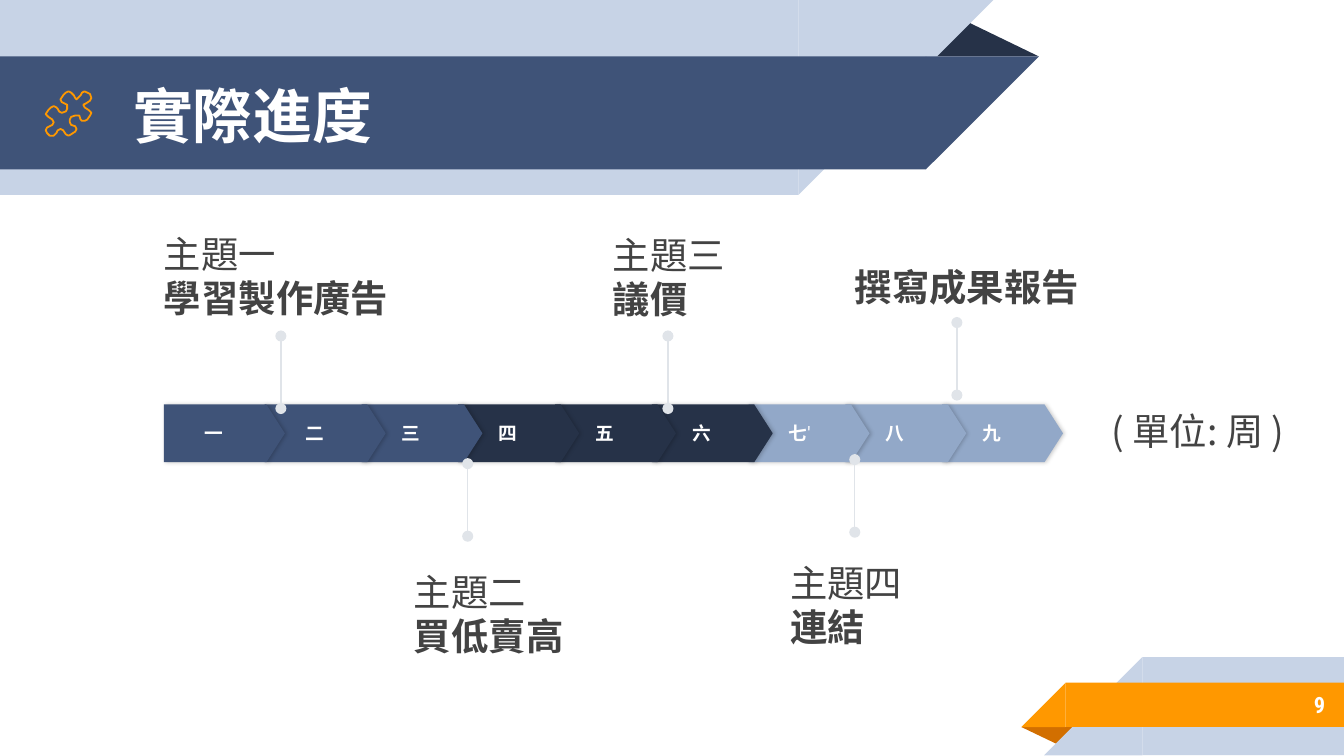
import pptx
import pptx.util
import pptx.dml.color
import pptx.enum.shapes
import pptx.enum.text
import pptx.oxml
import pptx.oxml.ns

Inches = pptx.util.Inches
Pt = pptx.util.Pt
Kind = pptx.enum.shapes.MSO_SHAPE
Anchor = pptx.enum.text.MSO_ANCHOR
Align = pptx.enum.text.PP_ALIGN
qn = pptx.oxml.ns.qn

COLORS = {
    "pale": "C7D3E6", "blue": "3F5378", "navy": "263248", "steel": "92A8C8",
    "orange": "FF9800", "rust": "D26F00", "line": "E0E4E9",
    "text": "434343", "white": "FFFFFF",
}
CJK = "Noto Sans CJK SC"
LATIN = "Roboto Condensed"

PUZZLE = [
    (30, 9), (33, 7), (34, 5), (33, 2), (31, 1), (29, 0), (27, 1), (26, 3),
    (25, 4), (24, 5), (23, 6), (22, 5), (21, 3), (19, 1), (17, 0), (15, 1),
    (13, 3), (11, 6), (12, 8), (14, 9), (16, 10), (16, 13), (15, 15),
    (12, 16), (10, 15), (9, 13), (8, 12), (6, 11), (4, 12), (2, 14), (0, 17),
    (2, 19), (5, 21), (6, 23), (5, 25), (3, 26), (1, 27), (0, 29), (1, 31),
    (3, 33), (6, 33), (8, 31), (9, 29), (11, 28), (13, 29), (15, 32),
    (17, 33), (19, 32), (22, 30), (23, 28), (22, 26), (19, 25), (18, 23),
    (18, 21), (19, 19), (22, 18), (25, 18), (26, 21), (27, 22), (29, 22),
    (31, 21), (33, 18), (34, 16), (32, 14), (29, 12), (28, 10),
]


def rgb(name):
    return pptx.dml.color.RGBColor.from_string(COLORS[name])


def style(run, size, color, bold=False, face=CJK):
    font = run.font
    font.size, font.bold, font.name = Pt(size), bold, face
    font.color.rgb = rgb(color)
    east = pptx.oxml.parse_xml(
        f'<a:ea {pptx.oxml.ns.nsdecls("a")} typeface="{face}"/>')
    run._r.get_or_add_rPr().find(qn("a:latin")).addnext(east)


def frame(shape, anchor, inset=(0, 0, 0, 0)):
    text = shape.text_frame
    text.word_wrap = True
    text.auto_size = pptx.enum.text.MSO_AUTO_SIZE.NONE
    text.vertical_anchor = anchor
    text.margin_left, text.margin_top, text.margin_right, text.margin_bottom = (
        Inches(side) for side in inset)
    return text


def block(slide, kind, box, color, flip=False, turn=0):
    shape = slide.shapes.add_shape(kind, *map(Inches, box))
    shape.shadow.inherit = False
    shape.fill.solid()
    shape.fill.fore_color.rgb = rgb(color)
    shape.line.fill.background()
    shape.rotation = turn
    if flip:
        shape._element.spPr.find(qn("a:xfrm")).set("flipH", "1")
    return shape


def fold(slide, box, color, turn=0):
    block(slide, Kind.ISOSCELES_TRIANGLE, box, color, turn=turn).adjustments[0] = 0.32


def banner(slide, box):
    left, top, width, height = box
    fold(slide, (left + width - 0.85, top + 0.14, 0.85, 0.28), "navy")
    for drop, flat, size, color in [(0, 5.94, height, "pale"), (0.42, 6.89, 0.84, "blue")]:
        block(slide, Kind.RECTANGLE, (left, top + drop, flat, size), color, True, 180)
        block(slide, Kind.RIGHT_TRIANGLE, (left + flat, top + drop, size, size), color, True, 180)


def heading(slide, box, words):
    title = slide.shapes.title
    slide.shapes._spTree.append(title._element)
    title.left, title.top, title.width, title.height = map(Inches, box)
    text = frame(title, Anchor.MIDDLE, (0.1,) * 4)
    text.text = words
    text.paragraphs[0].alignment = Align.LEFT
    style(text.paragraphs[0].runs[0], 32, "white", True)


def puzzle(slide, box):
    left, top, width, height = box
    pen = slide.shapes.build_freeform(*PUZZLE[0], scale=Inches(width) / 34)
    pen.add_line_segments(PUZZLE[1:], close=True)
    shape = pen.convert_to_shape(Inches(left), Inches(top))
    shape.shadow.inherit = False
    shape.fill.background()
    shape.line.color.rgb = rgb("orange")
    shape.line.width = Pt(0.96)


def footer(slide, box, number):
    left, top, width, height = box
    fold(slide, (left, top + 0.52, 0.43, 0.14), "rust", 180)
    for start, drop, size, color in [(0.17, 0, 0.73, "pale"), (0, 0.19, 0.33, "orange")]:
        edge = start + size
        block(slide, Kind.RECTANGLE, (left + edge, top + drop, width - edge, size), color, True)
        block(slide, Kind.RIGHT_TRIANGLE, (left + start, top + drop, size, size), color, True)
    page = slide.shapes.add_textbox(*map(Inches, (left + 0.73, top + 0.18, 1.63, 0.35)))
    text = frame(page, Anchor.MIDDLE, (0.1,) * 4)
    text.text = number
    text.paragraphs[0].alignment = Align.RIGHT
    style(text.paragraphs[0].runs[0], 12, "white", True, LATIN)


def weeks(slide, box, names):
    left, top, width, height = box
    size, step = 0.9, 0.72
    last = len(names) - 1
    tones = ["blue", "navy", "steel"]
    for index, name in reversed(list(enumerate(names))):
        x = left + width - size - (last - index) * step if index else left
        shape = block(slide, Kind.PENTAGON, (x, top, size, height), tones[index // 3])
        shape.adjustments[0] = 0.32
        shape._element.spPr.find(qn("a:effectLst")).append(pptx.oxml.parse_xml(
            f'<a:outerShdw {pptx.oxml.ns.nsdecls("a")} blurRad="{Pt(2.2)}" '
            f'dist="{Pt(0.8)}" dir="0" algn="bl" rotWithShape="0">'
            '<a:srgbClr val="000000"><a:alpha val="20000"/></a:srgbClr></a:outerShdw>'))
        text = frame(shape, Anchor.MIDDLE, (0.3, 0, 0, 0))
        text.text = name[0]
        line = text.paragraphs[0]
        line.alignment = Align.LEFT
        style(line.runs[0], 10, "white", True)
        if name[1:]:
            mark = line.add_run()
            mark.text = name[1:]
            style(mark, 10, "white", face=LATIN)


def stem(slide, x, low):
    link = slide.shapes.add_connector(
        pptx.enum.shapes.MSO_CONNECTOR.STRAIGHT,
        *map(Inches, (x, low, x, low - 0.54)))
    link.line.color.rgb = rgb("line")
    link.line.width = Pt(0.75)
    outline = link.line._get_or_add_ln()
    for end in ("headEnd", "tailEnd"):
        outline.append(pptx.oxml.parse_xml(
            f'<a:{end} {pptx.oxml.ns.nsdecls("a")} type="oval"/>'))
    link._element.spPr.append(pptx.oxml.parse_xml(
        f'<a:effectLst {pptx.oxml.ns.nsdecls("a")}/>'))


def label(slide, box, plain, strong, anchor=Anchor.BOTTOM):
    text = frame(slide.shapes.add_textbox(*map(Inches, box)), anchor)
    text.text = "\n".join(filter(None, (plain, strong)))
    for line in text.paragraphs:
        line.line_spacing = Pt(23.6)
        style(line.runs[0], 20, "text", line.text == strong)


def main():
    deck = pptx.Presentation()
    deck.slide_width = Inches(10)
    deck.slide_height = deck.slide_width * 9 // 16
    slide = deck.slides.add_slide(deck.slide_layouts[5])
    banner(slide, (0, 0, 7.73, 1.45))
    footer(slide, (7.6, 4.89, 2.4, 0.73), "9")
    heading(slide, (0.89, 0.43, 5.75, 0.84), "實際進度")
    puzzle(slide, (0.34, 0.68, 0.34, 0.33))
    weeks(slide, (1.22, 3.01, 6.69, 0.43),
          ["一", "二", "三", "四", "五", "六", "七'", "八", "九"])
    for x, low in [(2.09, 3.04), (4.97, 3.04), (7.12, 2.94), (3.48, 3.99), (6.36, 3.96)]:
        stem(slide, x, low)
    label(slide, (1.22, 1.8, 1.73, 0.58), "主題一", "學習製作廣告")
    label(slide, (3.08, 4.24, 2.13, 0.58), "主題二", "買低賣高", Anchor.TOP)
    label(slide, (4.56, 1.81, 1.73, 0.58), "主題三", "議價")
    label(slide, (5.88, 4.25, 1.73, 0.58), "主題四", "連結")
    label(slide, (6.36, 1.72, 1.73, 0.58), "", "撰寫成果報告")
    label(slide, (8.27, 3.02, 1.33, 0.35), "( 單位: 周 )", "")
    deck.save("out.pptx")


if __name__ == "__main__":
    main()
